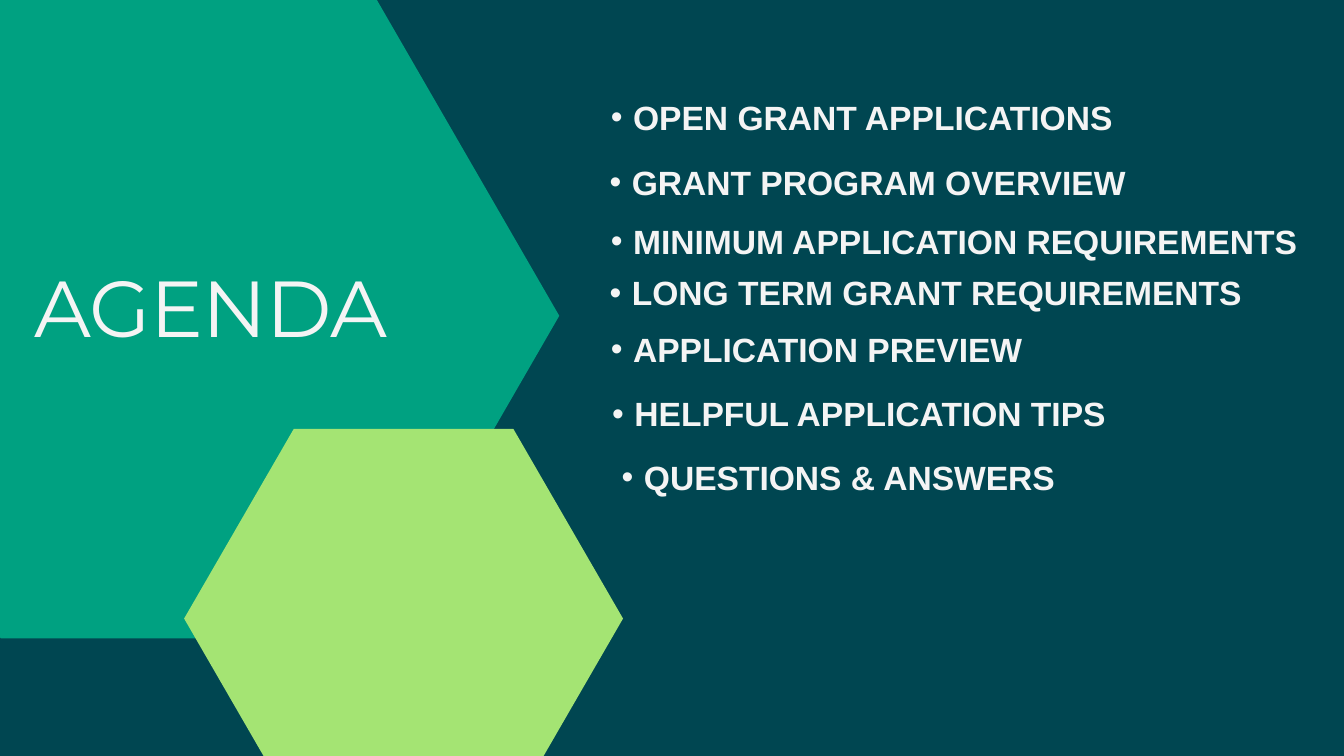
from lxml import etree
from pptx import Presentation
from pptx.dml.color import RGBColor
from pptx.enum.text import MSO_AUTO_SIZE
from pptx.oxml.ns import qn
from pptx.util import Cm, Pt

FIT_SHAPE = MSO_AUTO_SIZE.SHAPE_TO_FIT_TEXT
COLORS = {"back": "004651", "teal": "00A181", "lime": "A4E473", "text": "F4F4F4"}
ITEMS = [
    ("OPEN GRANT APPLICATIONS", 0.05, 0, 21.49),
    ("GRANT PROGRAM OVERVIEW", 0, 2.46, 21.92),
    ("MINIMUM APPLICATION REQUIREMENTS", 0.05, 4.67, 27.23),
    ("LONG TERM GRANT REQUIREMENTS", 0, 6.63, 26.04),
    ("APPLICATION PREVIEW", 0.05, 8.76, 24.71),
    ("HELPFUL APPLICATION TIPS", 0.1, 11.2, 24.71),
    ("QUESTIONS & ANSWERS", 0.46, 13.61, 20.68),
]


def rgb(name):
    """Return the named colour."""
    return RGBColor.from_string(COLORS[name])


def add_hexagon(slide, x, y, w, h, color):
    """Draw a flat-topped hexagon filling the given box."""
    outline = [(1, 0.5), (0.75, 1), (0.25, 1), (0, 0.5), (0.25, 0), (0.75, 0)]
    points = [(Cm(x + w * u), Cm(y + h * v)) for u, v in outline]
    builder = slide.shapes.build_freeform(*points[0])
    builder.add_line_segments(points[1:], close=True)
    sp = builder.convert_to_shape()
    sp.shadow.inherit = False
    sp.fill.solid()
    sp.fill.fore_color.rgb = rgb(color)
    sp.line.fill.background()


def add_text(slide, x, y, w, h, text, font, size, spacing, bold=False):
    """Add a one-line text box without margins and return its paragraph and run."""
    tf = slide.shapes.add_textbox(Cm(x), Cm(y), Cm(w), Cm(h)).text_frame
    tf.margin_left = tf.margin_right = tf.margin_top = tf.margin_bottom = 0
    tf.word_wrap = True
    tf.auto_size = FIT_SHAPE
    p = tf.paragraphs[0]
    p.line_spacing = Pt(spacing)
    r = p.add_run()
    r.text = text
    r.font.name = font
    r.font.size = Pt(size)
    r.font.bold = bold
    r.font.color.rgb = rgb("text")
    return p, r


def add_title(slide, x, y, w, h):
    """Place the agenda heading."""
    _, r = add_text(slide, x, y, w, h, "AGENDA", "Montserrat", 85, 102)
    r.font._element.set("spc", "-80")


def add_bullet(p):
    """Give a paragraph a hanging round bullet."""
    p.level = 1
    pPr = p._p.get_or_add_pPr()
    pPr.set("marL", str(Cm(1.68)))
    pPr.set("indent", str(Cm(-0.84)))
    etree.SubElement(pPr, qn("a:buFont")).set("typeface", "Arial")
    etree.SubElement(pPr, qn("a:buChar")).set("char", "•")


def add_agenda(slide, x, y):
    """Place the agenda items relative to the top left corner of the list."""
    for text, dx, dy, w in ITEMS:
        p, _ = add_text(slide, x + dx, y + dy, w, 1.4, text, "Arial", 36, 39.2, True)
        add_bullet(p)


def main():
    """Build and save the agenda slide."""
    prs = Presentation()
    prs.slide_width, prs.slide_height = Cm(50.8), Cm(28.58)
    slide = prs.slides.add_slide(prs.slide_layouts[6])
    slide.background.fill.solid()
    slide.background.fill.fore_color.rgb = rgb("back")
    add_hexagon(slide, -7.01, -0.25, 28.15, 24.38, "teal")
    add_hexagon(slide, 6.96, 16.21, 16.59, 14.35, "lime")
    add_title(slide, 1.3, 9.78, 15.88, 3.53)
    add_agenda(slide, 22.2, 3.81)
    prs.save("out.pptx")


if __name__ == "__main__":
    main()
